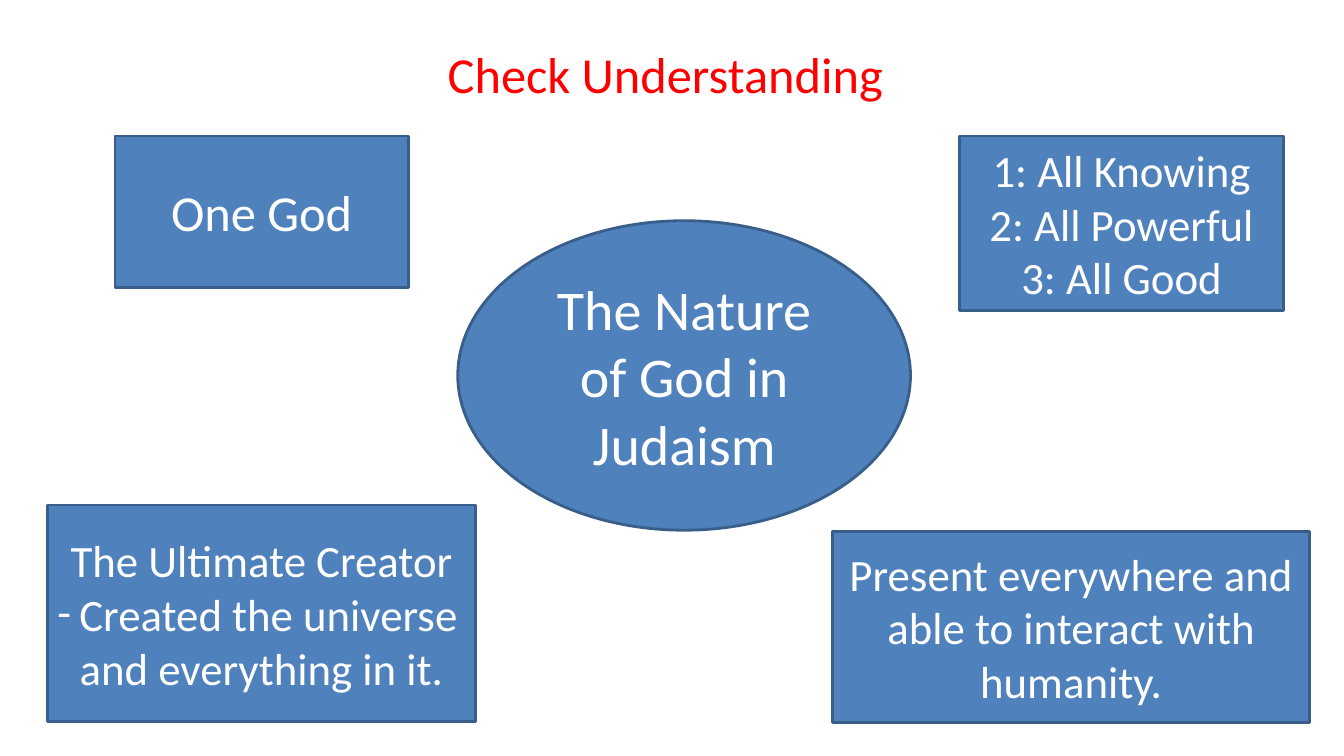
import pptx
import pptx.util
import pptx.dml.color
import pptx.enum.shapes
import pptx.enum.text
import lxml.etree
from pptx.oxml.ns import qn
from pptx.util import Inches

FONT = "Calibri"
COLORS = {"title": "FF0000", "text": "FFFFFF", "fill": "4F81BD", "line": "395E89"}
SHAPES = pptx.enum.shapes.MSO_SHAPE


def rgb(name):
    return pptx.dml.color.RGBColor.from_string(COLORS[name])


def write_text(shape, text, size, color):
    """Set centred text, one paragraph per line."""
    text_frame = shape.text_frame
    text_frame.text = text
    text_frame.word_wrap = True
    text_frame.auto_size = pptx.enum.text.MSO_AUTO_SIZE.NONE
    text_frame.vertical_anchor = pptx.enum.text.MSO_ANCHOR.MIDDLE
    for paragraph in text_frame.paragraphs:
        paragraph.alignment = pptx.enum.text.PP_ALIGN.CENTER
        for run in paragraph.runs:
            run.font.name = FONT
            run.font.size = pptx.util.Pt(size)
            run.font.color.rgb = rgb(color)


def add_title(slide, text):
    title = slide.shapes.title
    title.left, title.top = Inches(2.1), Inches(0.1)
    title.width, title.height = Inches(9), Inches(1.25)
    write_text(title, text, 36, "title")


def add_idea(slide, kind, box, text, size):
    """Add a filled shape holding one idea of the diagram."""
    shape = slide.shapes.add_shape(kind, *(Inches(length) for length in box))
    shape.shadow.inherit = False
    shape.fill.solid()
    shape.fill.fore_color.rgb = rgb("fill")
    shape.line.color.rgb = rgb("line")
    shape.line.width = pptx.util.Pt(2)
    write_text(shape, text, size, "text")
    return shape


def add_dash_bullet(paragraph):
    properties = paragraph._p.get_or_add_pPr()
    properties.set("marL", "0")
    properties.set("indent", str(Inches(-0.22)))
    lxml.etree.SubElement(properties, qn("a:buFont")).set("typeface", FONT)
    lxml.etree.SubElement(properties, qn("a:buChar")).set("char", "-")


def main():
    presentation = pptx.Presentation()
    presentation.slide_width = Inches(13.33)
    presentation.slide_height = Inches(7.5)
    slide = presentation.slides.add_slide(presentation.slide_layouts[5])

    add_title(slide, "Check Understanding")
    add_idea(slide, SHAPES.OVAL, (4.54, 2.19, 4.49, 3.07),
             "The Nature of God in Judaism", 40)
    creator = add_idea(slide, SHAPES.RECTANGLE, (0.47, 5.01, 4.25, 2.15),
                       "The Ultimate Creator\nCreated the universe and everything in it.", 32)
    add_dash_bullet(creator.text_frame.paragraphs[1])
    add_idea(slide, SHAPES.RECTANGLE, (1.14, 1.35, 2.91, 1.5), "One God", 36)
    add_idea(slide, SHAPES.RECTANGLE, (9.52, 1.35, 3.21, 1.73),
             "1: All Knowing\n2: All Powerful\n3: All Good", 32)
    add_idea(slide, SHAPES.RECTANGLE, (8.26, 5.27, 4.73, 1.9),
             "Present everywhere and able to interact with humanity.", 32)

    presentation.save("out.pptx")


if __name__ == "__main__":
    main()
